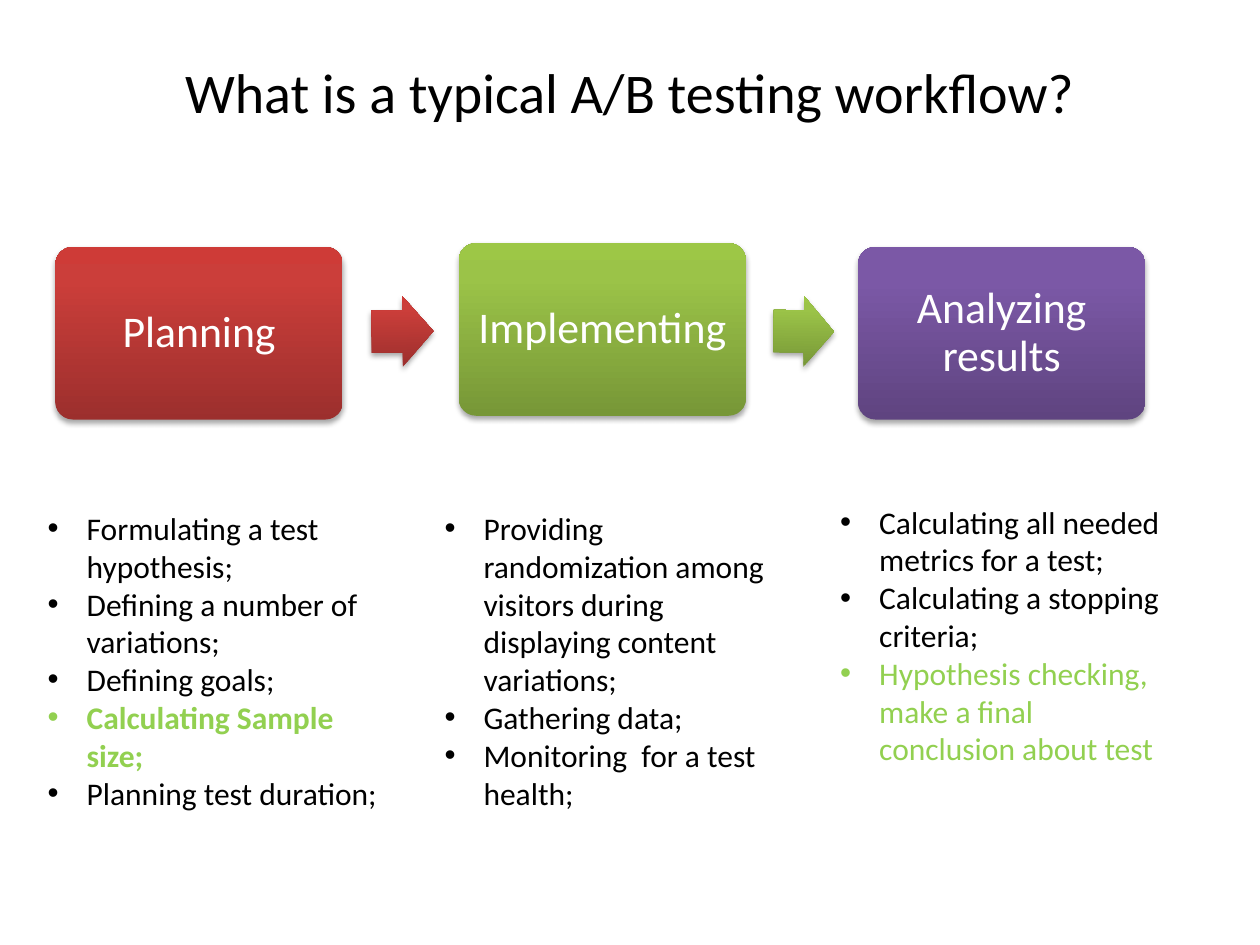
from copy import deepcopy

from lxml import etree
from pptx import Presentation
from pptx.dml.color import RGBColor
from pptx.enum import shapes, text
from pptx.oxml import parse_xml
from pptx.oxml.ns import nsdecls, qn
from pptx.util import Inches, Pt

RED = ("9C2F2D", "CB3E3A", "CE3B37")
GREEN = ("779737", "9BC348", "9DC746")
PURPLE = ("5F4480", "7B58A6", "7C57A8")
BLACK, WHITE, LIME = "000000", "FFFFFF", "92D050"


def paint(color, code):
    color.rgb = RGBColor.from_string(code)


def style(run, size, code, bold=False):
    run.font.name = "Calibri"
    run.font.size = Pt(size)
    run.font.bold = bold
    paint(run.font.color, code)


def place(shape, box):
    shape.left, shape.top, shape.width, shape.height = map(Inches, box)


def add_block(slide, kind, box, tones):
    """Shape with a bottom-to-top gradient and a soft shadow."""
    block = slide.shapes.add_shape(kind, *map(Inches, box))
    block.line.fill.background()
    block.fill.gradient()
    block.fill.gradient_angle = 90
    stops = block._element.spPr.find(".//" + qn("a:gsLst"))
    stops.append(deepcopy(stops[-1]))
    for stop, tone, spot in zip(block.fill.gradient_stops, tones, (0, 0.8, 1)):
        paint(stop.color, tone)
        stop.position = spot
    block.shadow.inherit = False
    block._element.spPr.find(qn("a:effectLst")).append(parse_xml(
        f'<a:outerShdw {nsdecls("a")} blurRad="40000" dist="23000" dir="5400000" '
        'rotWithShape="0"><a:srgbClr val="000000"><a:alpha val="35000"/>'
        '</a:srgbClr></a:outerShdw>'))
    return block


def add_title(slide, box, words):
    title = slide.shapes.title
    place(title, box)
    frame = title.text_frame
    frame.text = words
    frame.vertical_anchor = text.MSO_ANCHOR.MIDDLE
    para = frame.paragraphs[0]
    para.alignment = text.PP_ALIGN.CENTER
    style(para.runs[0], 32, BLACK)


def add_step(slide, box, label, tones):
    step = add_block(slide, shapes.MSO_SHAPE.ROUNDED_RECTANGLE, box, tones)
    step.adjustments[0] = 0.1
    frame = step.text_frame
    frame.word_wrap = True
    frame.margin_left = frame.margin_right = Inches(0.1)
    frame.margin_top = frame.margin_bottom = Inches(0.1)
    frame.vertical_anchor = text.MSO_ANCHOR.MIDDLE
    frame.text = label
    para = frame.paragraphs[0]
    para.alignment = text.PP_ALIGN.CENTER
    para.line_spacing = 0.9
    style(para.runs[0], 25, WHITE)


def add_arrow(slide, box, turn, tones):
    arrow = add_block(slide, shapes.MSO_SHAPE.RIGHT_ARROW, box, tones)
    arrow.adjustments[0], arrow.adjustments[1] = 0.6, 0.5
    arrow.rotation = turn


def add_list(slide, box, items):
    frame = slide.shapes.add_textbox(*map(Inches, box)).text_frame
    frame.word_wrap = True
    frame.text = "\n".join(words for words, _, _ in items)
    for para, (_, code, bold) in zip(frame.paragraphs, items):
        style(para.runs[0], 18, code, bold)
        props = para._p.get_or_add_pPr()
        props.set("marL", str(Inches(0.31)))
        props.set("indent", str(Inches(-0.31)))
        etree.SubElement(props, qn("a:buFont"), typeface="Arial")
        etree.SubElement(props, qn("a:buChar"), char="•")


def plain(*lines):
    return [(line, BLACK, False) for line in lines]


def main():
    deck = Presentation()
    deck.slide_width, deck.slide_height = Inches(10), Inches(7.5)
    slide = deck.slides.add_slide(deck.slide_layouts[5])
    add_title(slide, (0.5, 0.3, 9, 0.85), "What is a typical A/B testing workflow?")

    # Workflow steps
    for left, top, label, tones in (
            (0.44, 1.96, "Planning", RED),
            (3.64, 1.93, "Implementing", GREEN),
            (6.81, 1.96, "Analyzing results", PURPLE)):
        add_step(slide, (left, top, 2.28, 1.37), label, tones)

    # Arrows between the steps, tilted slightly towards the next one
    add_arrow(slide, (2.95, 2.35, 0.49, 0.56), 359.4, RED)
    add_arrow(slide, (6.14, 2.35, 0.48, 0.56), 0.6, GREEN)

    # Tasks below each step
    plan = plain("Formulating a test hypothesis;", "Defining a number of variations;",
                 "Defining goals;")
    plan += [("Calculating Sample size;", LIME, True)]
    plan += plain("Planning test duration;")
    run = plain("Providing randomization among visitors during displaying content variations;",
                "Gathering data;", "Monitoring  for a test health;")
    check = plain("Calculating all needed metrics for a test;",
                  "Calculating a stopping criteria;")
    check += [("Hypothesis checking, make a final conclusion about test", LIME, False)]
    add_list(slide, (0.28, 3.99, 2.83, 2.52), plan)
    add_list(slide, (3.43, 3.99, 2.83, 2.52), run)
    add_list(slide, (6.57, 3.94, 2.83, 2.22), check)

    deck.save("out.pptx")


if __name__ == "__main__":
    main()
